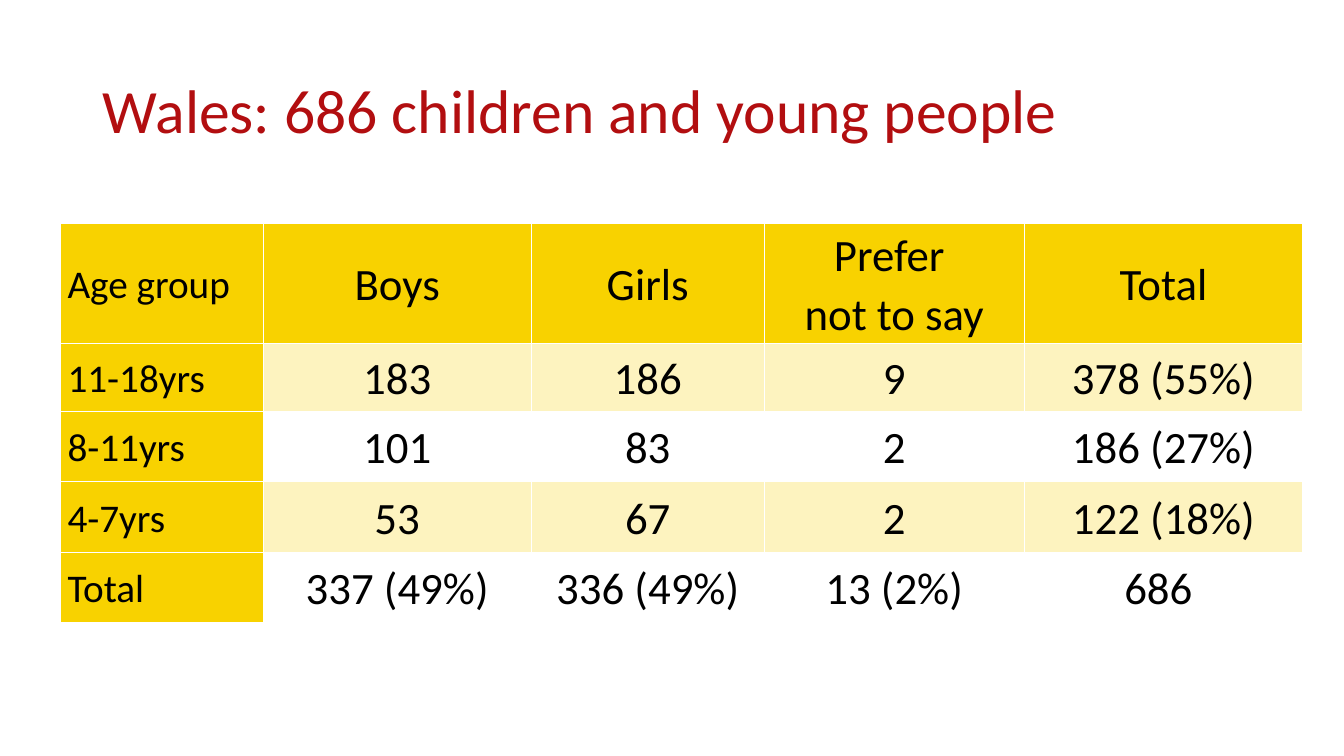
from dataclasses import dataclass

from lxml.etree import SubElement
from pptx import Presentation
from pptx.dml.color import RGBColor
from pptx.enum.text import MSO_ANCHOR, PP_ALIGN
from pptx.oxml.ns import qn
from pptx.util import Inches, Pt


@dataclass(frozen=True)
class Theme:
    font: str = "Calibri"
    title_color: RGBColor = RGBColor(0xB2, 0x0E, 0x10)
    text_color: RGBColor = RGBColor(0, 0, 0)
    yellow: RGBColor = RGBColor(0xF8, 0xD2, 0x00)
    band_opacity: int = 25
    title_size: int = 44
    label_size: int = 28
    value_size: int = 32


THEME = Theme()

COLUMN_WIDTHS = [2.01, 2.66, 2.31, 2.58, 2.76]
ROW_HEIGHTS = [1.19, 0.67, 0.7, 0.7, 0.7]
ROWS = [
    ["Age group", "Boys", "Girls", "Prefer \nnot to say", "Total"],
    ["11-18yrs", "183", "186", "9", "378 (55%)"],
    ["8-11yrs", "101", "83", "2", "186 (27%)"],
    ["4-7yrs", "53", "67", "2", "122 (18%)"],
    ["Total", "337 (49%)", "336 (49%)", "13 (2%)", "686 "],
]


def format_text(tf, size, color, align, line_spacing):
    for p in tf.paragraphs:
        p.alignment = align
        p.line_spacing = line_spacing
        for r in p.runs:
            r.font.name = THEME.font
            r.font.size = Pt(size)
            r.font.bold = False
            r.font.color.rgb = color


def add_title(slide, text):
    title = slide.shapes.title
    title.left, title.top = Inches(0.92), Inches(0.4)
    title.width, title.height = Inches(11.5), Inches(1.45)
    tf = title.text_frame
    tf.text = text
    tf.word_wrap = True
    tf.vertical_anchor = MSO_ANCHOR.MIDDLE
    format_text(tf, THEME.title_size, THEME.title_color, PP_ALIGN.LEFT, 0.9)


def fill_cell(cell, opacity):
    """Fill with yellow at a percentage of opacity; 0 leaves the cell clear."""
    if not opacity:
        cell.fill.background()
        return
    cell.fill.solid()
    cell.fill.fore_color.rgb = THEME.yellow
    if opacity < 100:
        color = cell._tc.tcPr.find(f"{qn('a:solidFill')}/{qn('a:srgbClr')}")
        SubElement(color, qn("a:alpha"), val=str(opacity * 1000))


def format_cell(cell, text, is_label, opacity):
    cell.text = text
    cell.vertical_anchor = MSO_ANCHOR.MIDDLE
    cell.margin_left = cell.margin_right = Inches(0.07)
    cell.margin_top = cell.margin_bottom = 0
    size = THEME.label_size if is_label else THEME.value_size
    align = PP_ALIGN.LEFT if is_label else PP_ALIGN.CENTER
    format_text(cell.text_frame, size, THEME.text_color, align, 1.07)
    fill_cell(cell, opacity)


def add_age_table(slide):
    frame = slide.shapes.add_table(
        len(ROWS), len(COLUMN_WIDTHS), Inches(0.6), Inches(2.22),
        Inches(sum(COLUMN_WIDTHS)), Inches(sum(ROW_HEIGHTS)))
    table = frame.table
    table.horz_banding = False
    for column, width in zip(table.columns, COLUMN_WIDTHS):
        column.width = Inches(width)
    for row, height in zip(table.rows, ROW_HEIGHTS):
        row.height = Inches(height)
    for i, texts in enumerate(ROWS):
        for j, text in enumerate(texts):
            if i == 0 or j == 0:
                opacity = 100
            else:
                opacity = THEME.band_opacity if i % 2 else 0
            format_cell(table.cell(i, j), text, j == 0, opacity)


def main():
    prs = Presentation()
    prs.slide_width, prs.slide_height = Inches(13.33), Inches(7.5)
    slide = prs.slides.add_slide(prs.slide_layouts[5])
    add_title(slide, "Wales: 686 children and young people")
    add_age_table(slide)
    prs.save("out.pptx")


if __name__ == "__main__":
    main()
